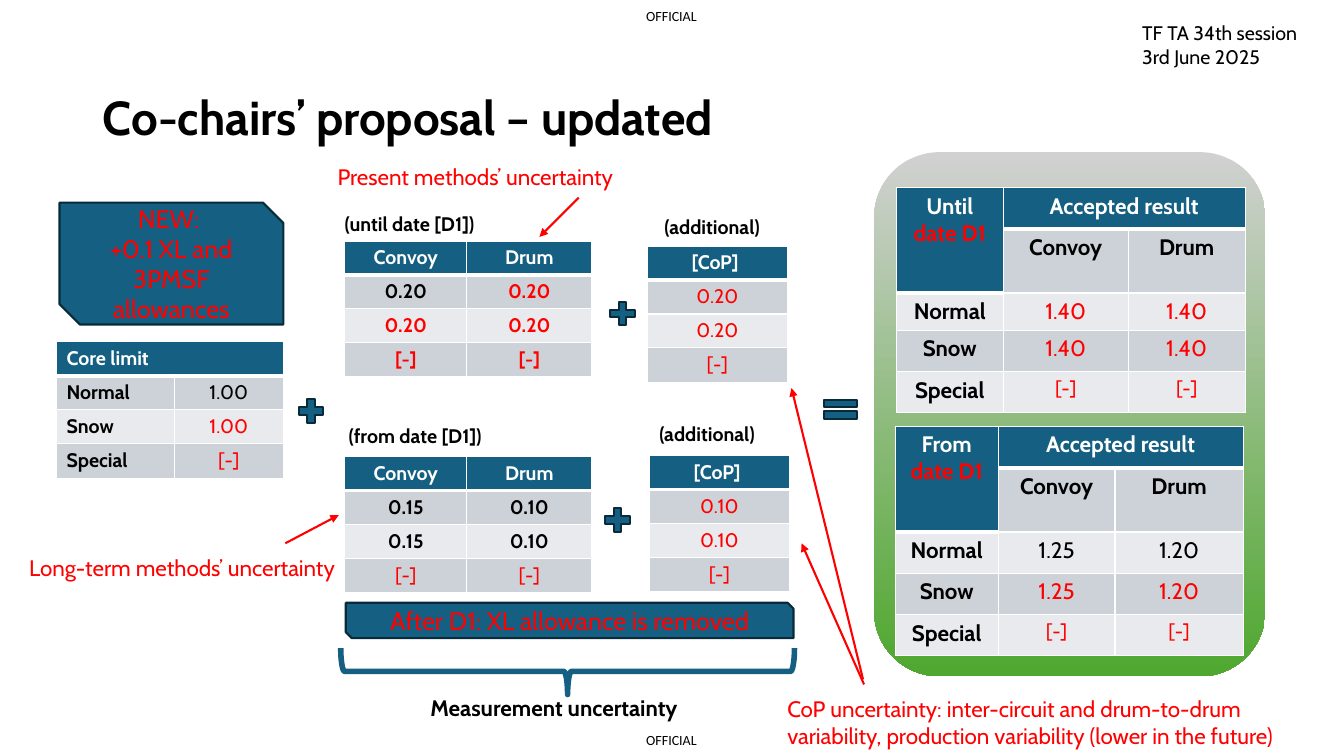
"""Build the slide with the co-chairs' updated proposal on uncertainty allowances."""
from lxml import etree
from pptx import Presentation
from pptx.dml.color import RGBColor
from pptx.enum.shapes import MSO_CONNECTOR, MSO_SHAPE
from pptx.enum.text import MSO_ANCHOR, MSO_AUTO_SIZE, PP_ALIGN
from pptx.oxml.ns import qn
from pptx.util import Inches, Pt

PLUS, EQUAL = MSO_SHAPE.MATH_PLUS, MSO_SHAPE.MATH_EQUAL
SNIP, BRACE = MSO_SHAPE.SNIP_2_DIAG_RECTANGLE, MSO_SHAPE.LEFT_BRACE
ROUND, LINE = MSO_SHAPE.ROUNDED_RECTANGLE, MSO_CONNECTOR.STRAIGHT
LEFT, CENTER = PP_ALIGN.LEFT, PP_ALIGN.CENTER
TOP, MIDDLE, FIXED = MSO_ANCHOR.TOP, MSO_ANCHOR.MIDDLE, MSO_AUTO_SIZE.NONE

HEX = {"black": "000000", "white": "FFFFFF", "red": "FF0000", "blue": "156082",
       "navy": "092A39", "dark": "CCD2D8", "light": "E8EAED",
       "grey": "D1D1D1", "green": "4EA72E"}


def head(text):
    return [(text, "white", True)]


def bold(text):
    return [(text, "black", True)]


def plain(text):
    return [(text, "black", False)]


def red(text):
    return [(text, "red", False)]


def hot(text):
    return [(text, "red", True)]


def result(word, normal, snow):
    """Return the rows of an accepted-result table."""
    return [[head(word) + hot("date D1"), head("Accepted result"), None],
            [None, bold("Convoy"), bold("Drum")],
            [bold("Normal"), *normal],
            [bold("Snow"), *snow],
            [bold("Special"), red("[-]"), red("[-]")]]


def cop(value):
    """Return the rows of a CoP table."""
    return [[head("[CoP] ")], [red(value)], [red(value)], [red("[-]")]]


TITLE = "Co-chairs’ proposal – updated"
METHOD = [head("Convoy"), head("Drum")]
CORE = [[head("Core limit"), None],
        [bold("Normal"), plain("1.00")],
        [bold("Snow"), red("1.00")],
        [bold("Special"), red("[-]")]]
NOW = [METHOD, [bold("0.20"), hot("0.20")], [hot("0.20")] * 2, [hot("[-]")] * 2]
LATER = [METHOD, [bold("0.15"), bold("0.10")], [bold("0.15"), bold("0.10")],
         [red("[-]")] * 2]
UNTIL = result("Until ", [red("1.40")] * 2, [red("1.40")] * 2)
FROM = result("From ", [plain("1.25"), plain("1.20")], [red("1.25"), red("1.20")])

FOUR = [0.33, 0.33, 0.33, 0.34]
CORNER = [(0, 0, 1, 0), (0, 1, 0, 2)]
TABLES = [
    (NOW, 3.42, 2.39, [1.21, 1.24], FOUR, 14, []),
    (CORE, 0.56, 3.39, [1.17, 1.08], [0.31, 0.31, 0.31, 0.35], 14, [(0, 0, 0, 1)]),
    (cop("0.20"), 6.42, 2.44, [1.39], FOUR, 14, []),
    (UNTIL, 8.89, 1.86, [1.06, 1.24, 1.16], [0.41, 0.41, 0.33, 0.41, 0.41], 16, CORNER),
    (LATER, 3.42, 4.53, [1.21, 1.24], FOUR, 14, []),
    (FROM, 8.88, 4.23, [1.02, 1.16, 1.27], [0.41] * 5, 16, CORNER),
    (cop("0.10"), 6.44, 4.52, [1.39], FOUR, 14, []),
]
SHAPES = [
    (PLUS, 2.92, 3.92, 0.33, 0.32, []),
    (PLUS, 6.01, 2.95, 0.33, 0.32, []),
    (PLUS, 5.96, 5, 0.33, 0.32, []),
    (EQUAL, 8.11, 3.9, 0.45, 0.32, []),
    (SNIP, 0.59, 2.01, 2.22, 1.21, [red("NEW: "), red("+0.1 XL and 3PMSF allowances")]),
    (SNIP, 3.43, 5.98, 4.44, 0.35, [red("After D1: XL allowance is removed")]),
]
NOTES = [
    ([bold("(until date [D1])")], 3.32, 2.05, 1.62, 0.34, 14, False),
    ([bold("(from date [D1])")], 3.36, 4.16, 1.62, 0.34, 14, True),
    ([bold("(additional)")], 6.49, 2.08, 1.22, 0.34, 14, False),
    ([bold("(additional)")], 6.44, 4.14, 1.22, 0.34, 14, False),
    ([bold("Measurement uncertainty")], 4.17, 6.84, 2.84, 0.37, 16, False),
    ([red("Present methods’ uncertainty")], 3.25, 1.57, 3.24, 0.37, 16, True),
    ([red("Long-term methods’ uncertainty")], 0.19, 5.45, 3.41, 0.37, 16, True),
    ([red("CoP uncertainty: inter-circuit and drum-to-drum variability, "
          "production variability (lower in the future)")],
     7.71, 6.85, 5.32, 0.64, 16, True),
    ([plain("TF TA 34th session"), plain("3rd June 2025")],
     11.23, 0.16, 2.18, 0.57, 14, True),
]
MARKS = [(6.41, 0.07), (6.41, 7.26)]
ARROWS = [(5.74, 1.96, 5.35, 2.35), (2.83, 5.39, 3.36, 5.11),
          (8.57, 6.79, 7.95, 5.39), (8.56, 6.74, 7.85, 3.85)]


def rgb(name):
    return RGBColor.from_string(HEX[name])


def apply(item, **values):
    for name, value in values.items():
        setattr(item, name, value)


def write(frame, paras, size, align=LEFT, face="Cabin"):
    for i, runs in enumerate(paras):
        para = frame.add_paragraph() if i else frame.paragraphs[0]
        para.alignment = align
        for text, color, strong in runs:
            run = para.add_run()
            run.text = text
            apply(run.font, name=face, size=Pt(size), bold=strong)
            run.font.color.rgb = rgb(color)


def edge(cell, wide):
    """Give a cell white borders, with a wide lower one if asked."""
    props = cell._tc.get_or_add_tcPr()
    for i, side in enumerate("LRTB"):
        width = 3 if wide and side == "B" else 1
        line = etree.Element(qn(f"a:ln{side}"), w=str(Pt(width)))
        fill = etree.SubElement(line, qn("a:solidFill"))
        etree.SubElement(fill, qn("a:srgbClr"), val=HEX["white"])
        props.insert(i, line)


def table(slide, rows, x, y, widths, heights, size, spans):
    box = map(Inches, (x, y, sum(widths), sum(heights)))
    grid = slide.shapes.add_table(len(rows), len(widths), *box).table
    for col, width in zip(grid.columns, widths):
        col.width = Inches(width)
    for row, height in zip(grid.rows, heights):
        row.height = Inches(height)
    for top, left, low, right in spans:
        corner = grid.cell(top, left)
        corner.merge(grid.cell(low, max(left, right)))
    for r, row in enumerate(rows):
        for c, runs in enumerate(row):
            cell = grid.cell(r, c)
            header = r == 0 or runs is None
            cell.fill.solid()
            cell.fill.fore_color.rgb = rgb("blue" if header else "dark" if r % 2 else "light")
            edge(cell, header)
            if runs:
                small = runs[0][0] == "[-]"
                align = LEFT if rows is CORE and c == 0 else CENTER
                write(cell.text_frame, [runs], 14 if small else size, align)


def shape(slide, kind, *box):
    item = slide.shapes.add_shape(kind, *map(Inches, box))
    item.shadow.inherit = False
    return item


def label(slide, paras, x, y, w, h, size, wrap):
    frame = slide.shapes.add_textbox(*map(Inches, (x, y, w, h))).text_frame
    apply(frame, word_wrap=wrap, auto_size=FIXED)
    write(frame, paras, size)


def main():
    deck = Presentation()
    apply(deck, slide_width=Inches(13.33), slide_height=Inches(7.5))
    slide = deck.slides.add_slide(deck.slide_layouts[5])

    title = slide.shapes.title
    apply(title, left=Inches(0.92), top=Inches(0.82), width=Inches(11.75), height=Inches(0.67))
    apply(title.text_frame, vertical_anchor=TOP, auto_size=FIXED, word_wrap=True)
    write(title.text_frame, [bold(TITLE)], 34)

    panel = shape(slide, ROUND, 8.67, 1.51, 3.88, 5.2)
    panel.line.fill.background()
    panel.fill.gradient()
    panel.fill.gradient_angle = 270
    for stop, color, place in zip(panel.fill.gradient_stops, ("grey", "green"), (0, 1)):
        stop.color.rgb = rgb(color)
        stop.position = place

    for spec in TABLES:
        table(slide, *spec)
    for kind, x, y, w, h, paras in SHAPES:
        item = shape(slide, kind, x, y, w, h)
        item.fill.solid()
        item.fill.fore_color.rgb = rgb("blue")
        item.line.color.rgb = rgb("navy")
        item.line.width = Pt(1.5)
        apply(item.text_frame, vertical_anchor=MIDDLE, word_wrap=True)
        write(item.text_frame, paras, 18, CENTER)

    brace = shape(slide, BRACE, 5.4, 4.41, 0.46, 4.5)
    brace.rotation = 270
    brace.fill.background()
    brace.line.color.rgb = rgb("blue")
    brace.line.width = Pt(4)

    for note in NOTES:
        label(slide, *note)
    for x, y in MARKS:
        frame = slide.shapes.add_textbox(*map(Inches, (x, y, 0.53, 0.17))).text_frame
        apply(frame, margin_left=0, margin_right=0, margin_top=0, margin_bottom=0, word_wrap=False)
        write(frame, [plain("OFFICIAL")], 10, face="Calibri")
    for ends in ARROWS:
        arrow = slide.shapes.add_connector(LINE, *map(Inches, ends))
        arrow.line.color.rgb = rgb("red")
        arrow.line.width = Pt(1.5)
        etree.SubElement(arrow.line._get_or_add_ln(), qn("a:tailEnd"), type="triangle")
        etree.SubElement(arrow._element.spPr, qn("a:effectLst"))
    deck.save("out.pptx")


if __name__ == "__main__":
    main()
